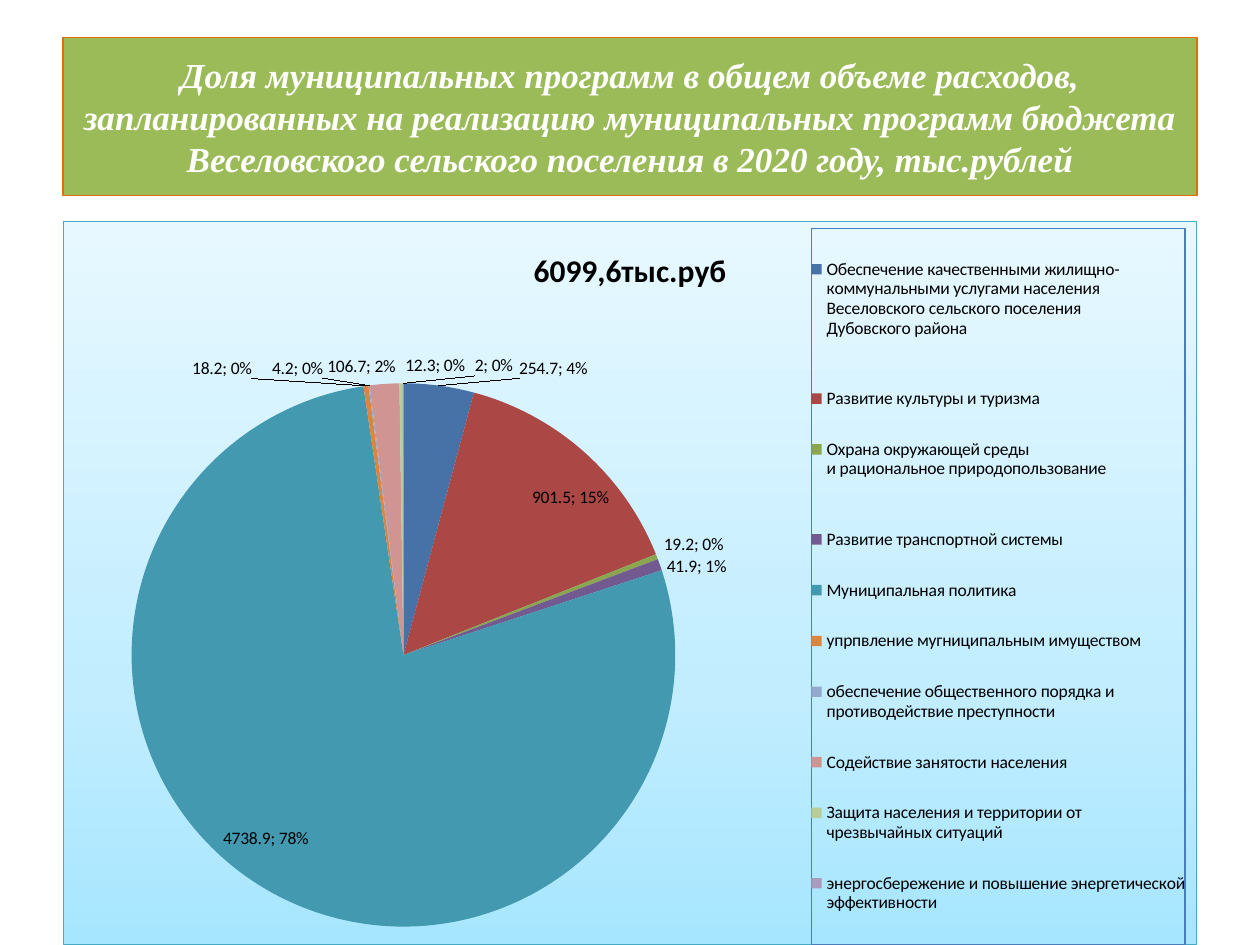
from lxml import etree
from pptx import Presentation
from pptx.chart.data import CategoryChartData
from pptx.dml.color import RGBColor
from pptx.enum.chart import XL_CHART_TYPE, XL_LABEL_POSITION, XL_LEGEND_POSITION
from pptx.enum.text import MSO_ANCHOR, PP_ALIGN
from pptx.oxml import parse_xml
from pptx.oxml.ns import nsdecls, qn
from pptx.util import Inches, Pt

WHITE = RGBColor(0xFF, 0xFF, 0xFF)
BLACK = RGBColor(0x00, 0x00, 0x00)
GREEN = RGBColor(0x9B, 0xBB, 0x59)
ORANGE = RGBColor(0xE4, 0x6C, 0x0A)
TEAL = RGBColor(0x46, 0xAA, 0xC5)
BLUE = RGBColor(0x4A, 0x7E, 0xBB)
GRADIENT = [(0, RGBColor(0xA7, 0xE6, 0xFF)), (35, RGBColor(0xC1, 0xED, 0xFF)),
            (100, RGBColor(0xE7, 0xF8, 0xFF))]

PROGRAMS = [
    ("Обеспечение качественными жилищно-\nкоммунальными услугами населения \n"
     "Веселовского сельского поселения\nДубовского района\n", 254.7, RGBColor(0x46, 0x72, 0xA8)),
    ("Развитие культуры и туризма", 901.5, RGBColor(0xAB, 0x47, 0x44)),
    ("Охрана окружающей среды \nи рациональное природопользование\n",
     19.2, RGBColor(0x8A, 0xA6, 0x4F)),
    ("Развитие транспортной системы", 41.9, RGBColor(0x72, 0x59, 0x90)),
    ("Муниципальная политика", 4738.9, RGBColor(0x42, 0x99, 0xB0)),
    ("упрпвление мугниципальным имуществом", 18.2, RGBColor(0xDC, 0x85, 0x3E)),
    ("обеспечение общественного порядка и противодействие преступности",
     4.2, RGBColor(0x93, 0xA9, 0xCE)),
    ("Содействие занятости населения", 106.7, RGBColor(0xD0, 0x94, 0x93)),
    ("Защита населения и территории от чрезвычайных ситуаций",
     12.3, RGBColor(0xB8, 0xCD, 0x97)),
    ("энергосбережение и повышение энергетической эффективности",
     2, RGBColor(0xA9, 0x9B, 0xBD)),
]
# Shift of each small slice's label, as a share of the chart size
LABEL_SHIFTS = {0: (0.07, 0), 2: (0, 0), 3: (0, 0.02), 5: (-0.1, 0),
                6: (-0.04, 0), 7: (-0.02, 0), 8: (0.03, 0), 9: (0.08, 0)}


def write_text(text_frame, text, size, font="Calibri", color=BLACK, bold=False, italic=False):
    paragraph = text_frame.paragraphs[0]
    paragraph.alignment = PP_ALIGN.CENTER
    run = paragraph.add_run()
    run.text = text
    run.font.name = font
    run.font.size = Pt(size)
    run.font.bold = bold
    run.font.italic = italic
    run.font.color.rgb = color


def set_layout(element, index, **settings):
    """Give a chart part a manual layout, inserted as the child at index."""
    for old_layout in element.findall(qn("c:layout")):
        element.remove(old_layout)
    layout = etree.Element(qn("c:layout"))
    manual = etree.SubElement(layout, qn("c:manualLayout"))
    for name, value in settings.items():
        etree.SubElement(manual, qn(f"c:{name}"), val=str(value))
    element.insert(index, layout)


presentation = Presentation()
presentation.slide_width = Inches(10)
presentation.slide_height = Inches(7.5)
slide = presentation.slides.add_slide(presentation.slide_layouts[5])

title = slide.shapes.title
title.left, title.top = Inches(0.5), Inches(0.3)
title.width, title.height = Inches(9), Inches(1.25)
title.fill.solid()
title.fill.fore_color.rgb = GREEN
title.line.color.rgb = ORANGE
title.line.width = Pt(0.75)
title.text_frame.word_wrap = True
title.text_frame.vertical_anchor = MSO_ANCHOR.MIDDLE
write_text(title.text_frame,
           "Доля муниципальных программ в общем объеме расходов, запланированных на реализацию "
           "муниципальных программ бюджета Веселовского сельского поселения в 2020 году, тыс.рублей",
           20, font="Times New Roman", color=WHITE, bold=True, italic=True)

chart_data = CategoryChartData()
chart_data.categories = [name for name, value, color in PROGRAMS]
chart_data.add_series("Series 1", [value for name, value, color in PROGRAMS])
chart = slide.shapes.add_chart(XL_CHART_TYPE.PIE, Inches(0.5), Inches(1.75),
                               Inches(9), Inches(5.75), chart_data).chart
chart.font.name = "Calibri"
chart.font.size = Pt(10)
chart.font.color.rgb = BLACK
chart.has_title = True
write_text(chart.chart_title.text_frame, "6099,6тыс.руб", 18, bold=True)
chart.has_legend = True
chart.legend.position = XL_LEGEND_POSITION.RIGHT
chart.legend.include_in_layout = False

plot = chart.plots[0]
plot.vary_by_categories = True
series = plot.series[0]
labels = series.data_labels
labels.show_value = True
labels.show_percentage = True
labels.position = XL_LABEL_POSITION.BEST_FIT
for index, (name, value, color) in enumerate(PROGRAMS):
    fill = series.points[index].format.fill
    fill.solid()
    fill.fore_color.rgb = color
for index in LABEL_SHIFTS:
    series.points[index].data_label.position = XL_LABEL_POSITION.OUTSIDE_END

chart_space = chart.element
for label, (x, y) in zip(chart_space.xpath(".//c:dLbl"), LABEL_SHIFTS.values()):
    label.find(qn("c:showPercent")).set("val", "1")
    if x or y:
        set_layout(label, 1, x=x, y=y)
for bubble_flag in chart_space.xpath(".//c:ser//c:showBubbleSize"):
    separator = etree.Element(qn("c:separator"))
    separator.text = "; "
    bubble_flag.addnext(separator)

edges = {"xMode": "edge", "yMode": "edge"}
legend = chart_space.xpath(".//c:legend")[0]
set_layout(chart_space.xpath(".//c:plotArea")[0], 0, layoutTarget="inner", **edges,
           x=0.06, y=0.22, w=0.48, h=0.76)
set_layout(legend, 1, **edges, x=0.66, y=0.01, w=0.33, h=0.99)
set_layout(chart_space.xpath("./c:chart/c:title")[0], 1, **edges, x=0.41, y=0.03)

legend.find(qn("c:overlay")).addnext(parse_xml(
    f'<c:spPr {nsdecls("c", "a")}><a:ln w="9525"><a:solidFill><a:srgbClr val="{BLUE}"/>'
    '</a:solidFill></a:ln></c:spPr>'))
stops = "".join(f'<a:gs pos="{position * 1000}"><a:srgbClr val="{color}"/></a:gs>'
                for position, color in GRADIENT)
chart_space.find(qn("c:chart")).addnext(parse_xml(
    f'<c:spPr {nsdecls("c", "a")}><a:gradFill><a:gsLst>{stops}</a:gsLst>'
    '<a:lin ang="16200000" scaled="1"/></a:gradFill><a:ln w="9525"><a:solidFill>'
    f'<a:srgbClr val="{TEAL}"/></a:solidFill></a:ln></c:spPr>'))

presentation.save("out.pptx")
